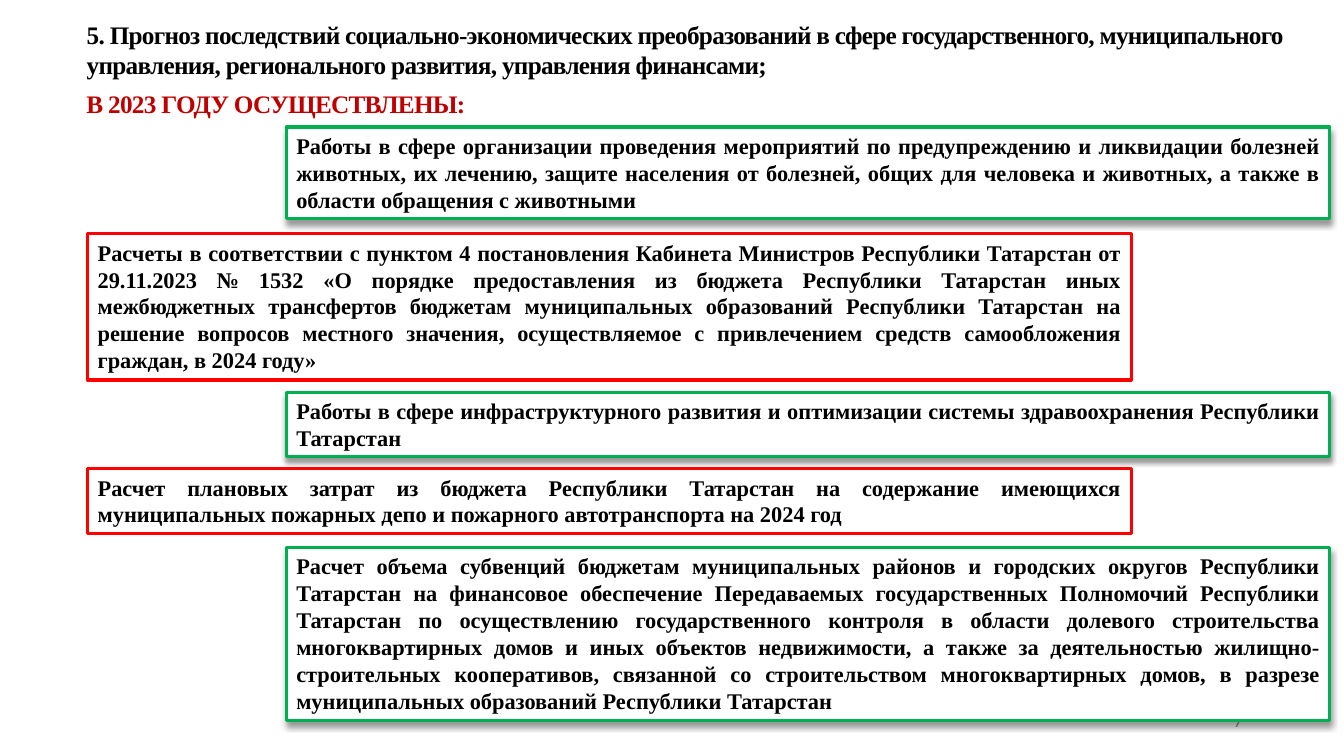
from lxml.etree import SubElement
from pptx import Presentation
from pptx.dml.color import RGBColor
from pptx.enum.shapes import MSO_SHAPE
from pptx.enum.text import MSO_ANCHOR, MSO_AUTO_SIZE, PP_ALIGN
from pptx.oxml.ns import qn
from pptx.util import Inches, Pt

COLORS = {
    "white": "FFFFFF",
    "black": "000000",
    "gray": "8C8C8C",
    "dark_red": "C00000",
    "green": "00B050",
    "red": "FF0000",
}
CARD_WIDTH = 10.35
LINE_HEIGHT = 0.27
CARD_PADDING = 0.1
CARD_LEFT = {"green": 2.84, "red": 0.87}
TITLE = (
    "5. Прогноз последствий социально-экономических преобразований в сфере "
    "государственного, муниципального управления, регионального развития, "
    "управления финансами;"
)
CARDS = [
    ("green", 1.26, 3,
     "Работы в сфере организации проведения мероприятий по предупреждению и "
     "ликвидации болезней животных, их лечению, защите населения от болезней, "
     "общих для человека и животных, а также в области обращения с животными"),
    ("red", 2.32, 5,
     "Расчеты в соответствии с пунктом 4 постановления Кабинета Министров "
     "Республики Татарстан от 29.11.2023 № 1532 «О порядке предоставления из "
     "бюджета Республики Татарстан иных межбюджетных трансфертов бюджетам "
     "муниципальных образований Республики Татарстан на решение вопросов "
     "местного значения, осуществляемое с привлечением средств самообложения "
     "граждан, в 2024 году»"),
    ("green", 3.89, 2,
     "Работы в сфере инфраструктурного развития и оптимизации системы "
     "здравоохранения Республики Татарстан"),
    ("red", 4.65, 2,
     "Расчет плановых затрат из бюджета Республики Татарстан на содержание "
     "имеющихся муниципальных пожарных депо и пожарного автотранспорта на "
     "2024 год"),
    ("green", 5.43, 6,
     "Расчет объема субвенций бюджетам муниципальных районов и городских "
     "округов Республики Татарстан на финансовое обеспечение Передаваемых "
     "государственных Полномочий Республики Татарстан по осуществлению "
     "государственного контроля в области долевого строительства "
     "многоквартирных домов и иных объектов недвижимости, а также за "
     "деятельностью жилищно-строительных кооперативов, связанной со "
     "строительством многоквартирных домов, в разрезе муниципальных "
     "образований Республики Татарстан"),
]


def color(name):
    """Return the named colour."""
    return RGBColor.from_string(COLORS[name])


def write_text(box, text, size=16, font="Times New Roman", fill="black",
               bold=True, align=PP_ALIGN.LEFT, anchor=MSO_ANCHOR.TOP,
               spacing=0):
    """Write one formatted paragraph into a box."""
    frame = box.text_frame
    frame.word_wrap = True
    frame.auto_size = MSO_AUTO_SIZE.NONE
    frame.vertical_anchor = anchor
    para = frame.paragraphs[0]
    para.alignment = align
    span = para.add_run()
    span.text = text
    span.font.size = Pt(size)
    span.font.name = font
    span.font.bold = bold
    span.font.color.rgb = color(fill)
    if spacing:
        span.font._element.set("spc", str(int(spacing * 100)))


def add_soft_shadow(box):
    """Give a box a soft shadow that falls straight down."""
    effects = box._element.spPr.find(qn("a:effectLst"))
    shadow = SubElement(effects, qn("a:outerShdw"), blurRad=str(Pt(4)),
                        dist=str(Pt(3)), dir="5400000", rotWithShape="0")
    tint = SubElement(shadow, qn("a:srgbClr"), val=COLORS["black"])
    SubElement(tint, qn("a:alpha"), val="40000")


def place_title(page, left, top, width, height):
    """Move the title placeholder into the given box and fill it."""
    title = page.shapes.title
    title.left, title.top = Inches(left), Inches(top)
    title.width, title.height = Inches(width), Inches(height)
    title.fill.solid()
    title.fill.fore_color.rgb = color("white")
    write_text(title, TITLE, size=18, spacing=-0.5)


def add_label(page, text, left, top, width, height, **style):
    """Add a plain text box in the given box."""
    label = page.shapes.add_textbox(Inches(left), Inches(top),
                                    Inches(width), Inches(height))
    write_text(label, text, **style)


def add_card(page, text, left, top, width, height, outline):
    """Add an outlined card with justified text; green cards cast a shadow."""
    card = page.shapes.add_shape(MSO_SHAPE.RECTANGLE, Inches(left),
                                 Inches(top), Inches(width), Inches(height))
    card.fill.solid()
    card.fill.fore_color.rgb = color("white")
    card.line.color.rgb = color(outline)
    card.line.width = Pt(2.25)
    card.shadow.inherit = False
    if outline == "green":
        add_soft_shadow(card)
    write_text(card, text, align=PP_ALIGN.JUSTIFY)


def build_page(deck):
    """Build the page of works carried out in 2023."""
    page = deck.slides.add_slide(deck.slide_layouts[5])
    add_label(page, "7", 9.42, 6.95, 3, 0.4, size=12, font="Calibri",
              fill="gray", bold=False, align=PP_ALIGN.RIGHT,
              anchor=MSO_ANCHOR.MIDDLE)
    place_title(page, 0.76, 0.14, 12.13, 0.71)
    add_label(page, "В 2023 ГОДУ ОСУЩЕСТВЛЕНЫ:", 0.76, 0.83, 3.97, 0.4,
              size=18, fill="dark_red", spacing=-0.5)
    for outline, top, lines, text in CARDS:
        add_card(page, text, CARD_LEFT[outline], top, CARD_WIDTH,
                 CARD_PADDING + LINE_HEIGHT * lines, outline)


def main():
    """Create and save the deck."""
    deck = Presentation()
    deck.slide_width, deck.slide_height = Inches(13.33), Inches(7.5)
    build_page(deck)
    deck.save("out.pptx")


if __name__ == "__main__":
    main()
